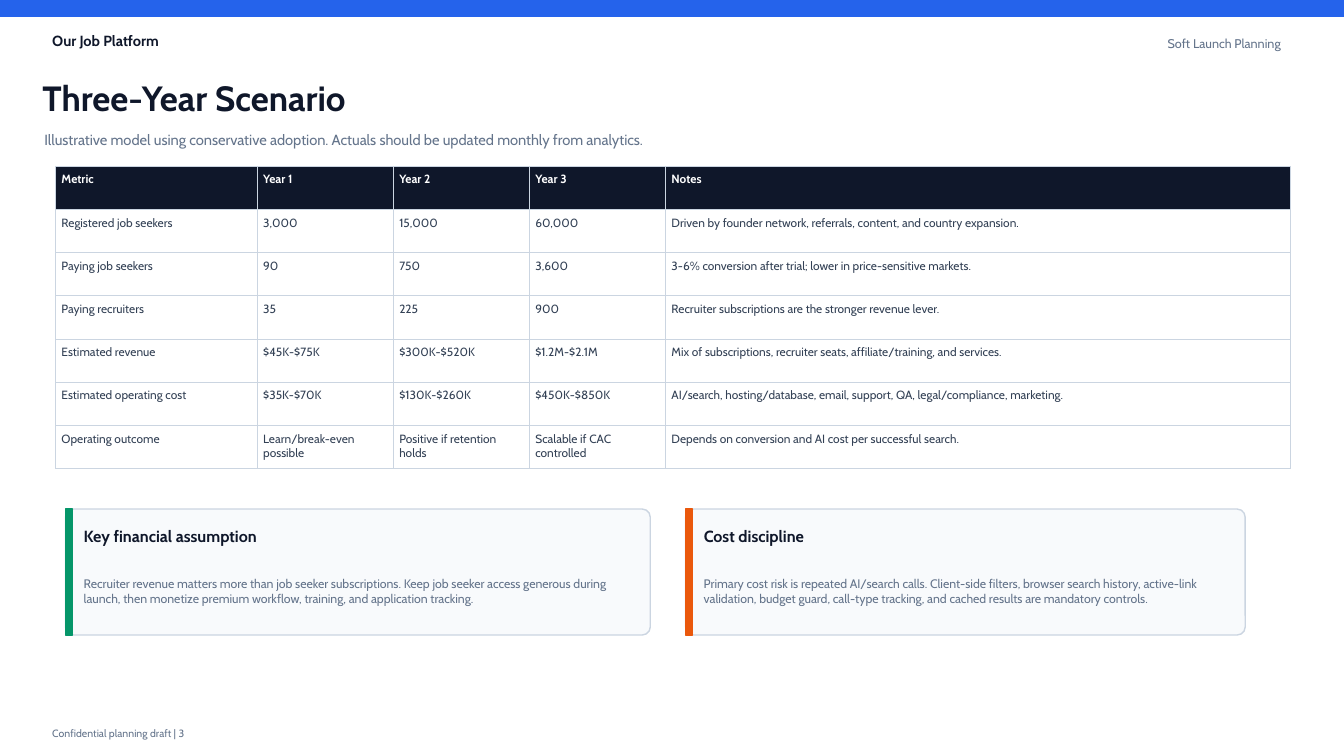
from lxml import etree
from pptx import Presentation
from pptx.dml.color import RGBColor
from pptx.enum import shapes, text
from pptx.oxml import ns
from pptx.util import Inches, Pt

NAVY = RGBColor(0x0F, 0x17, 0x2A)
SLATE = RGBColor(0x33, 0x41, 0x55)
MUTED = RGBColor(0x64, 0x74, 0x8B)
BORDER = RGBColor(0xCB, 0xD5, 0xE1)
PANEL = RGBColor(0xF8, 0xFA, 0xFC)
WHITE = RGBColor(0xFF, 0xFF, 0xFF)
BLUE = RGBColor(0x25, 0x63, 0xEB)
GREEN = RGBColor(0x05, 0x96, 0x69)
ORANGE = RGBColor(0xEA, 0x58, 0x0C)

SCENARIO = [
    ("Metric", "Year 1", "Year 2", "Year 3", "Notes"),
    ("Registered job seekers", "3,000", "15,000", "60,000",
     "Driven by founder network, referrals, content, and country expansion."),
    ("Paying job seekers", "90", "750", "3,600",
     "3-6% conversion after trial; lower in price-sensitive markets."),
    ("Paying recruiters", "35", "225", "900",
     "Recruiter subscriptions are the stronger revenue lever."),
    ("Estimated revenue", "$45K-$75K", "$300K-$520K", "$1.2M-$2.1M",
     "Mix of subscriptions, recruiter seats, affiliate/training, and services."),
    ("Estimated operating cost", "$35K-$70K", "$130K-$260K", "$450K-$850K",
     "AI/search, hosting/database, email, support, QA, legal/compliance, marketing."),
    ("Operating outcome", "Learn/break-even possible", "Positive if retention holds",
     "Scalable if CAC controlled",
     "Depends on conversion and AI cost per successful search."),
]
COLUMN_WIDTHS = (2, 1.35, 1.35, 1.35, 6.2)
CARDS = [
    (0.65, 5.8, GREEN, "Key financial assumption",
     "Recruiter revenue matters more than job seeker subscriptions. Keep job seeker "
     "access generous during launch, then monetize premium workflow, training, and "
     "application tracking."),
    (6.8, 5.55, ORANGE, "Cost discipline",
     "Primary cost risk is repeated AI/search calls. Client-side filters, browser "
     "search history, active-link validation, budget guard, call-type tracking, and "
     "cached results are mandatory controls."),
]


def write(frame, words, size, color=MUTED, bold=False, align=text.PP_ALIGN.LEFT,
          anchor=text.MSO_ANCHOR.MIDDLE, insets=(0, 0)):
    """Fill a text frame; insets are horizontal and vertical, in inches."""
    frame.word_wrap = True
    frame.auto_size = text.MSO_AUTO_SIZE.NONE
    frame.vertical_anchor = anchor
    frame.margin_left = frame.margin_right = Inches(insets[0])
    frame.margin_top = frame.margin_bottom = Inches(insets[1])
    paragraph = frame.paragraphs[0]
    paragraph.alignment = align
    run = paragraph.add_run()
    run.text = words
    run.font.name = "Cabin"
    run.font.size = Pt(size)
    run.font.bold = bold
    run.font.color.rgb = color


def outline_cell(cell):
    properties = cell._tc.get_or_add_tcPr()
    for index, side in enumerate(("lnL", "lnR", "lnT", "lnB")):
        line = etree.Element(ns.qn(f"a:{side}"), w=str(Pt(0.7)))
        fill = etree.SubElement(line, ns.qn("a:solidFill"))
        etree.SubElement(fill, ns.qn("a:srgbClr"), val=str(BORDER))
        properties.insert(index, line)


class SlideBuilder:
    def __init__(self, slide):
        self.slide = slide

    def title(self, words, left, top, width, height):
        heading = self.slide.shapes.title
        heading.left, heading.top = Inches(left), Inches(top)
        heading.width, heading.height = Inches(width), Inches(height)
        write(heading.text_frame, words, 25, NAVY, bold=True)

    def label(self, words, left, top, width, height, **style):
        box = self.slide.shapes.add_textbox(
            Inches(left), Inches(top), Inches(width), Inches(height))
        write(box.text_frame, words, **style)

    def block(self, left, top, width, height, fill, line=None, radius=None):
        kind = shapes.MSO_SHAPE.ROUNDED_RECTANGLE if radius else shapes.MSO_SHAPE.RECTANGLE
        block = self.slide.shapes.add_shape(
            kind, Inches(left), Inches(top), Inches(width), Inches(height))
        if radius:
            block.adjustments[0] = radius / min(width, height)
        block.shadow.inherit = False
        block.fill.solid()
        block.fill.fore_color.rgb = fill
        block.line.color.rgb = line or fill
        block.line.width = Pt(1)

    def table(self, rows, widths, left, top, height):
        table = self.slide.shapes.add_table(
            len(rows), len(widths), Inches(left), Inches(top),
            Inches(sum(widths)), Inches(height)).table
        for column, width in zip(table.columns, widths):
            column.width = Inches(width)
        for r, row in enumerate(rows):
            header = r == 0
            for c, words in enumerate(row):
                cell = table.cell(r, c)
                cell.fill.solid()
                cell.fill.fore_color.rgb = NAVY if header else WHITE
                outline_cell(cell)
                cell.margin_left = cell.margin_right = Inches(0.06)
                cell.margin_top = cell.margin_bottom = Inches(0.06)
                write_cell(cell, words, header)

    def card(self, left, width, accent, heading, body):
        top, height, indent = 5.05, 1.25, 0.18
        self.block(left, top, width, height, PANEL, BORDER, radius=0.08)
        self.block(left, top, 0.07, height, accent)
        self.label(heading, left + indent, top + 0.14, width - 0.3, 0.25,
                   size=11.5, color=NAVY, bold=True)
        self.label(body, left + indent, top + 0.48, width - 0.28, 0.67, size=8.8)


def write_cell(cell, words, header):
    paragraph = cell.text_frame.paragraphs[0]
    run = paragraph.add_run()
    run.text = words
    run.font.name = "Cabin"
    run.font.size = Pt(8.5)
    run.font.bold = header
    run.font.color.rgb = WHITE if header else SLATE


def main():
    deck = Presentation()
    deck.slide_width, deck.slide_height = Inches(13.33), Inches(7.5)
    page = SlideBuilder(deck.slides.add_slide(deck.slide_layouts[5]))
    padding = (0.1, 0.05)

    page.block(0, 0, 13.33, 0.16, BLUE)
    page.label("Our Job Platform", 0.42, 0.28, 2.3, 0.25,
               size=10.5, color=NAVY, bold=True, insets=padding)
    page.title("Three-Year Scenario", 0.42, 0.72, 8.7, 0.5)
    page.label("Illustrative model using conservative adoption. "
               "Actuals should be updated monthly from analytics.",
               0.44, 1.22, 9.5, 0.34, size=10.5)
    page.label("Soft Launch Planning", 10.35, 0.3, 2.45, 0.26,
               size=9, align=text.PP_ALIGN.RIGHT, insets=padding)
    page.table(SCENARIO, COLUMN_WIDTHS, left=0.55, top=1.65, height=3)
    for card in CARDS:
        page.card(*card)
    page.label("Confidential planning draft | 3", 0.42, 7.18, 4.6, 0.2,
               size=7.5, insets=padding)
    deck.save("out.pptx")


if __name__ == "__main__":
    main()
